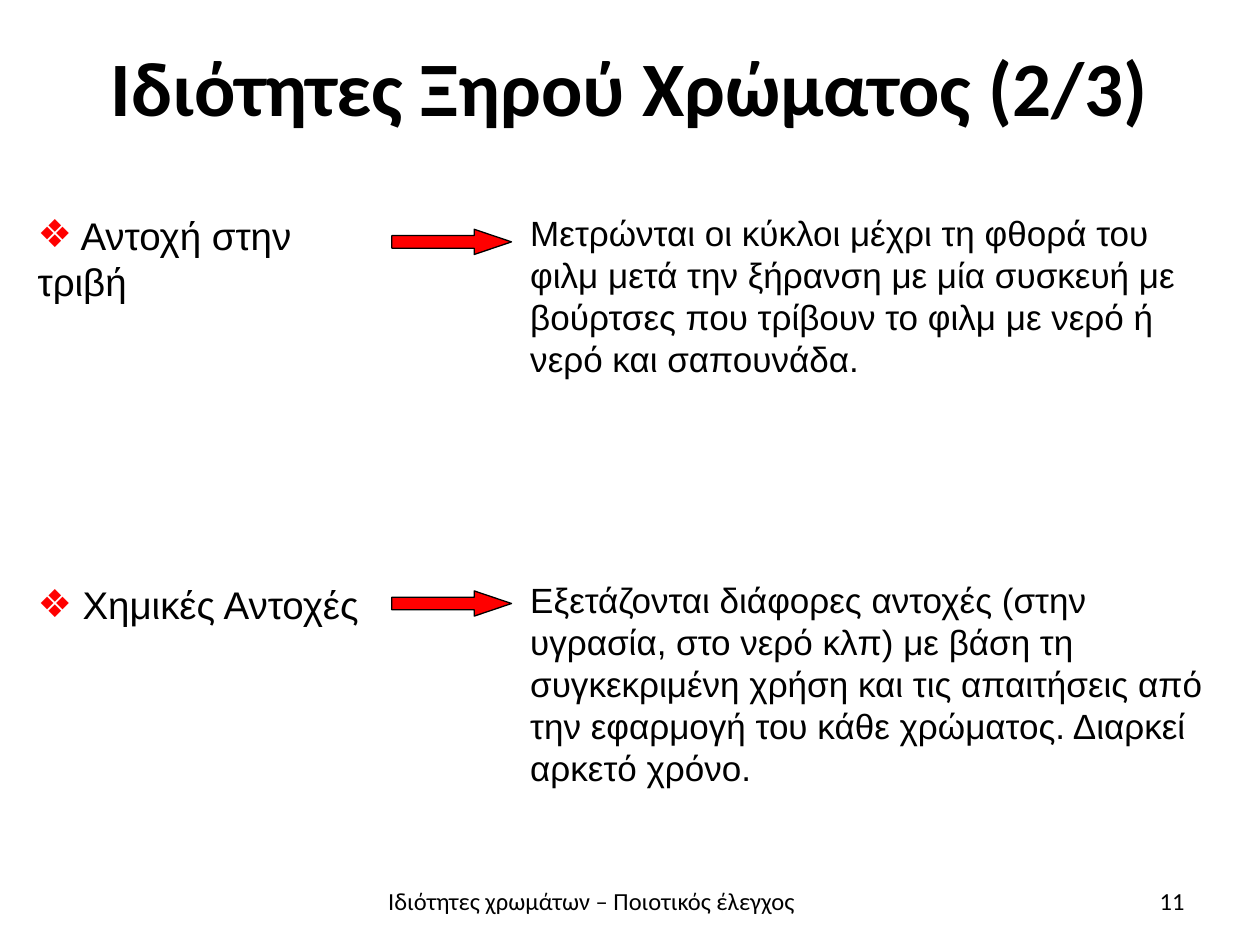
import pptx
import pptx.dml.color
import pptx.enum.shapes
import pptx.enum.text
import pptx.oxml
import pptx.oxml.ns
import pptx.util

Inches = pptx.util.Inches
Align = pptx.enum.text.PP_ALIGN
Anchor = pptx.enum.text.MSO_ANCHOR
BLACK = pptx.dml.color.RGBColor(0, 0, 0)
RED = pptx.dml.color.RGBColor(255, 0, 0)

ROWS = [
    {
        "top": 1.63, "label_drop": 0, "arrow_drop": 0.19,
        "label_size": (2.91, 0.84), "detail_height": 1.45,
        "label": " Αντοχή στην τριβή",
        "detail": "Μετρώνται οι κύκλοι μέχρι τη φθορά του φιλμ μετά την ξήρανση με μία "
                  "συσκευή με βούρτσες που τρίβουν το φιλμ με νερό ή νερό και σαπουνάδα.",
    },
    {
        "top": 4.54, "label_drop": 0.02, "arrow_drop": 0.15,
        "label_size": (3.07, 0.47), "detail_height": 1.78,
        "label": " Χημικές Αντοχές",
        "detail": "Εξετάζονται διάφορες αντοχές (στην υγρασία, στο νερό κλπ) με βάση τη "
                  "συγκεκριμένη χρήση και τις απαιτήσεις από την εφαρμογή του κάθε "
                  "χρώματος. Διαρκεί αρκετό χρόνο.",
    },
]


def add_text(shapes, box, text, size, font="Arial", align=Align.LEFT,
             anchor=Anchor.TOP, bold=False):
    """Place one wrapped paragraph in the box and return the paragraph."""
    frame = shapes.add_textbox(*map(Inches, box)).text_frame
    frame.word_wrap = True
    frame.vertical_anchor = anchor
    para = frame.paragraphs[0]
    para.alignment = align
    span = para.add_run()
    span.text = text
    span.font.name = font
    span.font.size = pptx.util.Pt(size)
    span.font.bold = bold
    span.font.color.rgb = BLACK
    return para


def add_bullet(para):
    """Give the paragraph a red diamond bullet with no hanging indent."""
    properties = para._p.get_or_add_pPr()
    properties.set("marL", "0")
    properties.set("indent", "0")
    namespace = pptx.oxml.ns.nsdecls("a")
    for xml in (
        f'<a:buClr {namespace}><a:srgbClr val="{RED}"/></a:buClr>',
        f'<a:buFont {namespace} typeface="Arial"/>',
        f'<a:buChar {namespace} char="❖"/>',
    ):
        properties.append(pptx.oxml.parse_xml(xml))


def add_arrow(shapes, box):
    """Draw a red block arrow in the box."""
    arrow = shapes.add_shape(
        pptx.enum.shapes.MSO_SHAPE.RIGHT_ARROW, *map(Inches, box))
    arrow.adjustments[0] = 0.5
    arrow.adjustments[1] = 1.48
    arrow.shadow.inherit = False
    arrow.fill.solid()
    arrow.fill.fore_color.rgb = RED
    arrow.line.color.rgb = BLACK
    arrow.line.width = pptx.util.Pt(0.75)


def add_property_row(page, left, row):
    """Group a bulleted property, its arrow and its explanation."""
    shapes = page.shapes.add_group_shape().shapes
    top = row["top"]
    add_text(shapes, (left + 3.91, top, 5.68, row["detail_height"]), row["detail"], 20)
    label_box = (left, top + row["label_drop"], *row["label_size"])
    add_bullet(add_text(shapes, label_box, row["label"], 22))
    add_arrow(shapes, (left + 2.91, top + row["arrow_drop"], 0.95, 0.2))


def add_title(page, box):
    """Write the centred heading."""
    add_text(page.shapes, box, "Ιδιότητες Ξηρού Χρώματος (2/3)", 44, "Calibri",
             Align.CENTER, Anchor.MIDDLE, True)


def add_footer(page, left, top, height):
    """Write the lecture name and the page number."""
    add_text(page.shapes, (left, top, 3.79, height),
             "Ιδιότητες χρωμάτων – Ποιοτικός έλεγχος", 14, "Calibri",
             Align.CENTER, Anchor.MIDDLE)
    add_text(page.shapes, (left + 4.37, top, 2.33, height), "11", 14, "Calibri",
             Align.RIGHT, Anchor.MIDDLE)


def main():
    """Build and save the deck."""
    deck = pptx.Presentation()
    deck.slide_width, deck.slide_height = Inches(10), Inches(7.5)
    page = deck.slides.add_slide(deck.slide_layouts[6])
    add_title(page, (0.5, 0.21, 9, 0.94))
    for row in ROWS:
        add_property_row(page, 0.2, row)
    add_footer(page, 2.8, 6.95, 0.4)
    deck.save("out.pptx")


if __name__ == "__main__":
    main()
